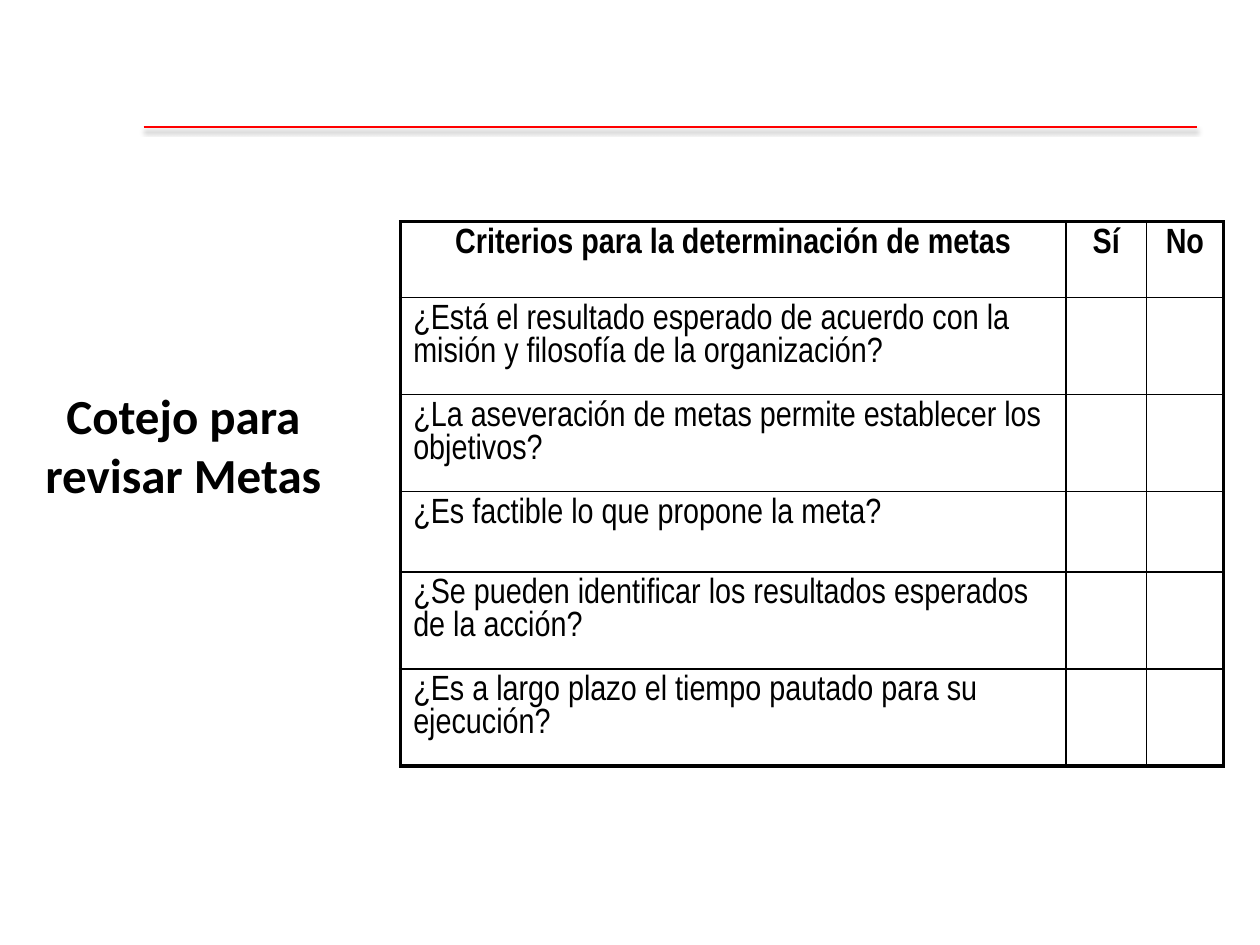
from lxml import etree
from pptx import Presentation
from pptx.dml.color import RGBColor
from pptx.enum.shapes import MSO_CONNECTOR
from pptx.enum.text import MSO_ANCHOR, PP_ALIGN
from pptx.oxml import parse_xml
from pptx.oxml.ns import nsdecls
from pptx.util import Inches, Pt

STRAIGHT = MSO_CONNECTOR.STRAIGHT
MIDDLE = MSO_ANCHOR.MIDDLE
LEFT, CENTER = PP_ALIGN.LEFT, PP_ALIGN.CENTER

TITLE = "Cotejo para revisar Metas"
HEADERS = ["Criterios para la determinación de metas", "Sí", "No"]
CRITERIA = [
    "¿Está el resultado esperado de acuerdo con la misión y filosofía de la organización?",
    "¿La aseveración de metas permite establecer los objetivos?",
    "¿Es factible lo que propone la meta?",
    "¿Se pueden identificar los resultados esperados de la acción?",
    "¿Es a largo plazo el tiempo pautado para su ejecución?",
]

THEME = {
    "ink": "000000", "rule": "FF0000",
    "title_font": "Calibri", "title_size": 28,
    "table_font": "Arial Narrow", "table_size": 20,
    "thin": 1, "thick": 2.25,
}

SLIDE_W, SLIDE_H = 10, 7.5
RULE_LEFT, RULE_RIGHT, RULE_Y = 1.14, 9.5, 1.01
TITLE_BOX = (0, 1.47, 2.91, 4.12)
TABLE_LEFT, TABLE_TOP = 3.18, 1.76
COLUMNS = [5.28, 0.64, 0.61]
ROWS = [0.6, 0.77, 0.77, 0.64, 0.77, 0.77]


def style(paragraph, part, bold, align):
    paragraph.alignment = align
    font = paragraph.font
    font.name = THEME[part + "_font"]
    font.size = Pt(THEME[part + "_size"])
    font.bold = bold
    font.color.rgb = RGBColor.from_string(THEME["ink"])


def add_rule(slide):
    rule = slide.shapes.add_connector(
        STRAIGHT, Inches(RULE_LEFT), Inches(RULE_Y), Inches(RULE_RIGHT), Inches(RULE_Y))
    rule.line.color.rgb = RGBColor.from_string(THEME["rule"])
    rule.line.width = Pt(THEME["thin"])
    rule._element.spPr.append(parse_xml(
        f'<a:effectLst {nsdecls("a")}>'
        f'<a:outerShdw blurRad="{Pt(3.1)}" dist="{Pt(1.6)}" dir="5400000" rotWithShape="0">'
        f'<a:srgbClr val="{THEME["ink"]}"><a:alpha val="38000"/></a:srgbClr>'
        '</a:outerShdw></a:effectLst>'))


def add_title(slide):
    frame = slide.shapes.add_textbox(*map(Inches, TITLE_BOX)).text_frame
    frame.word_wrap = True
    frame.vertical_anchor = MIDDLE
    frame.text = TITLE
    style(frame.paragraphs[0], "title", True, CENTER)


def set_borders(cell, outer_sides):
    """Draw every side, thick where the side is on the table's edge."""
    properties = cell._tc.get_or_add_tcPr()
    for position, (side, is_outer) in enumerate(outer_sides.items()):
        width = Pt(THEME["thick" if is_outer else "thin"])
        border = parse_xml(
            f'<a:ln{side} {nsdecls("a")} w="{width}"><a:solidFill>'
            f'<a:srgbClr val="{THEME["ink"]}"/></a:solidFill></a:ln{side}>')
        properties.insert(position, border)


def add_checklist(slide):
    grid = [HEADERS] + [[question, "", ""] for question in CRITERIA]
    table = slide.shapes.add_table(
        len(ROWS), len(COLUMNS), Inches(TABLE_LEFT), Inches(TABLE_TOP),
        Inches(sum(COLUMNS)), Inches(sum(ROWS))).table
    table.first_row = table.horz_banding = False
    for column, width in zip(table.columns, COLUMNS):
        column.width = Inches(width)
    for row, height in zip(table.rows, ROWS):
        row.height = Inches(height)
    for r, texts in enumerate(grid):
        for c, text in enumerate(texts):
            cell = table.cell(r, c)
            cell.text = text
            cell.fill.background()
            is_header = r == 0
            style(cell.text_frame.paragraphs[0], "table", is_header,
                  CENTER if is_header else LEFT)
            set_borders(cell, {"L": c == 0, "R": c == len(COLUMNS) - 1,
                               "T": is_header, "B": r == len(ROWS) - 1})


def main():
    deck = Presentation()
    deck.slide_width, deck.slide_height = Inches(SLIDE_W), Inches(SLIDE_H)
    slide = deck.slides.add_slide(deck.slide_layouts[6])
    add_rule(slide)
    add_title(slide)
    add_checklist(slide)
    deck.save("out.pptx")


if __name__ == "__main__":
    main()
